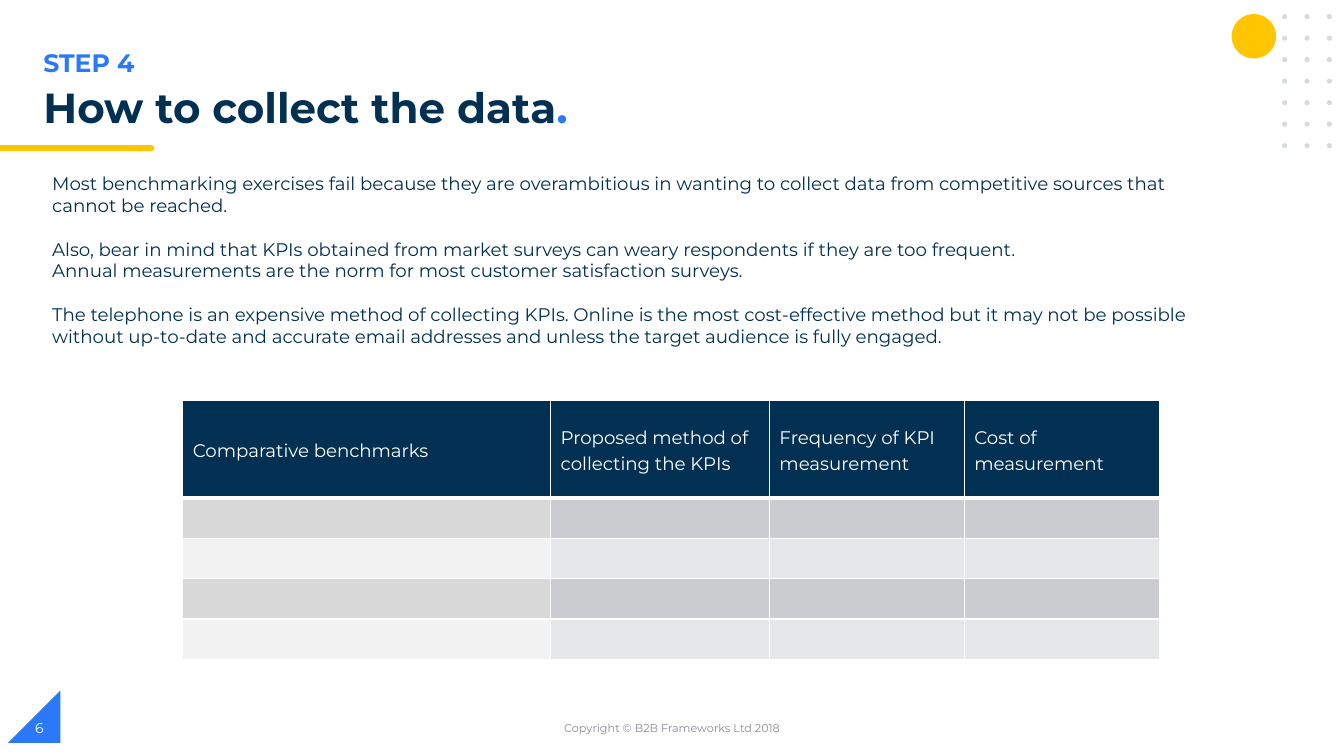
import pptx
import pptx.util
import pptx.dml.color
import pptx.enum.shapes
import pptx.enum.text
import pptx.oxml.ns
import lxml.etree

Pt = pptx.util.Pt
SHAPE = pptx.enum.shapes.MSO_SHAPE
ANCHOR = pptx.enum.text.MSO_ANCHOR
ALIGN = pptx.enum.text.PP_ALIGN

FONT = "Montserrat"
NAVY, BLUE, YELLOW, WHITE = "023053", "2B79F8", "FFC600", "FFFFFF"
DOT_GREY, FOOTER_GREY = "D1DBE0", "888C97"

ADVICE = [
    "Most benchmarking exercises fail because they are overambitious in wanting to collect "
    "data from competitive sources that cannot be reached.",
    "Also, bear in mind that KPIs obtained from market surveys can weary respondents if they "
    "are too frequent.\vAnnual measurements are the norm for most customer satisfaction surveys.",
    "The telephone is an expensive method of collecting KPIs. Online is the most cost-effective "
    "method but it may not be possible without up-to-date and accurate email addresses and "
    "unless the target audience is fully engaged.",
]
# Header and width of each table column
COLUMNS = [
    ("Comparative benchmarks", 262.8),
    ("Proposed method of collecting the KPIs", 156.3),
    ("Frequency of KPI measurement", 139.2),
    ("Cost of measurement", 139.2),
]
# Fill of the first column and of the others, by alternating row
BANDS = [("D8D8D8", "CACCCF"), ("F2F2F2", "E6E7E9")]


def rgb(color):
    return pptx.dml.color.RGBColor.from_string(color)


def write(frame, paragraphs, size, color, bold=False, align=ALIGN.LEFT,
          anchor=ANCHOR.TOP, line_spacing=None, gap=0):
    """Fill a text frame; each paragraph is a string or a list of (text, color)."""
    frame.word_wrap = True
    frame.vertical_anchor = anchor
    for index, content in enumerate(paragraphs):
        paragraph = frame.paragraphs[0] if index == 0 else frame.add_paragraph()
        paragraph.alignment = align
        paragraph.space_before = Pt(gap if index else 0)
        if line_spacing:
            paragraph.line_spacing = line_spacing
        pieces = [(content, color)] if isinstance(content, str) else content
        for text, piece_color in pieces:
            for part_index, part in enumerate(text.split("\v")):
                if part_index:
                    paragraph.add_line_break()
                run = paragraph.add_run()
                run.text = part
                run.font.name = FONT
                run.font.size = Pt(size)
                run.font.bold = bold
                run.font.color.rgb = rgb(piece_color)


def add_text(slide, box, paragraphs, **text_format):
    textbox = slide.shapes.add_textbox(*map(Pt, box))
    write(textbox.text_frame, paragraphs, **text_format)


def add_solid(slide, kind, box, color):
    solid = slide.shapes.add_shape(kind, *map(Pt, box))
    solid.shadow.inherit = False
    solid.fill.solid()
    solid.fill.fore_color.rgb = rgb(color)
    solid.line.fill.background()
    return solid


def set_borders(cell, **widths):
    properties = cell._tc.get_or_add_tcPr()
    for side in "LRTB":
        line = lxml.etree.SubElement(properties, pptx.oxml.ns.qn(f"a:ln{side}"),
                                     w=str(Pt(widths.get(side, 1))))
        fill = lxml.etree.SubElement(line, pptx.oxml.ns.qn("a:solidFill"))
        lxml.etree.SubElement(fill, pptx.oxml.ns.qn("a:srgbClr"), val=WHITE)


def add_decoration(slide):
    corner = add_solid(slide, SHAPE.RIGHT_TRIANGLE, (5.8, 493.2, 37.4, 37.4), BLUE)
    corner.rotation = 270
    # Underline with a rounded end
    add_solid(slide, SHAPE.FLOWCHART_TERMINATOR, (96.5, 103.7, 13.7, 4.3), YELLOW)
    add_solid(slide, SHAPE.RECTANGLE, (0, 103.7, 101.5, 4.3), YELLOW)
    # Sun and dot grid
    add_solid(slide, SHAPE.OVAL, (879.8, 10.1, 31.7, 31.7), YELLOW)
    for row in range(7):
        for column in range(3):
            add_solid(slide, SHAPE.OVAL,
                      (915.8 + 16 * column, 10.1 + 15.36 * row, 3.6, 3.6), DOT_GREY)


def add_title(slide):
    title = slide.shapes.title
    title.left, title.top, title.width, title.height = map(Pt, (23.8, 59, 507.6, 40.3))
    title.text_frame.auto_size = pptx.enum.text.MSO_AUTO_SIZE.NONE
    write(title.text_frame, [[("How to collect the data", NAVY), (".", BLUE)]],
          size=30, color=NAVY, bold=True, line_spacing=0.9)


def add_benchmark_table(slide):
    header_height, row_height, body_rows = 70, 28.8, 4
    table = slide.shapes.add_table(
        body_rows + 1, len(COLUMNS), Pt(130.5), Pt(285.8),
        Pt(sum(width for _, width in COLUMNS)),
        Pt(header_height + body_rows * row_height)).table
    for row_index, row in enumerate(table.rows):
        row.height = Pt(row_height if row_index else header_height)
        for column_index, (header, width) in enumerate(COLUMNS):
            table.columns[column_index].width = Pt(width)
            cell = row.cells[column_index]
            cell.margin_top = cell.margin_bottom = 0
            cell.vertical_anchor = ANCHOR.MIDDLE
            set_borders(cell, T=3 if row_index == 1 else 1, B=1 if row_index else 3)
            cell.fill.solid()
            if row_index:
                fill = BANDS[(row_index - 1) % 2][min(column_index, 1)]
            else:
                fill = NAVY
                write(cell.text_frame, [header], size=13, color=WHITE,
                      anchor=ANCHOR.MIDDLE, line_spacing=1.15)
            cell.fill.fore_color.rgb = rgb(fill)


def main():
    deck = pptx.Presentation()
    deck.slide_width, deck.slide_height = Pt(960), Pt(540)
    slide = deck.slides.add_slide(deck.slide_layouts.get_by_name("Title Only"))

    add_decoration(slide)

    # Heading and advice
    add_text(slide, (23.8, 30.2, 481.7, 28.8), ["STEP 4"], size=18, color=BLUE, bold=True)
    add_title(slide)
    add_text(slide, (30.2, 119.5, 831.6, 152.6), ADVICE, size=13, color=NAVY, gap=15.6)

    add_benchmark_table(slide)

    # Footer
    add_text(slide, (318.2, 505.4, 324, 28.8), ["Copyright © B2B Frameworks Ltd 2018"],
             size=8, color=FOOTER_GREY, align=ALIGN.CENTER, anchor=ANCHOR.MIDDLE)
    add_text(slide, (18, 505.4, 216, 28.8), ["6"], size=10, color=WHITE,
             anchor=ANCHOR.MIDDLE)

    deck.save("out.pptx")


if __name__ == "__main__":
    main()
